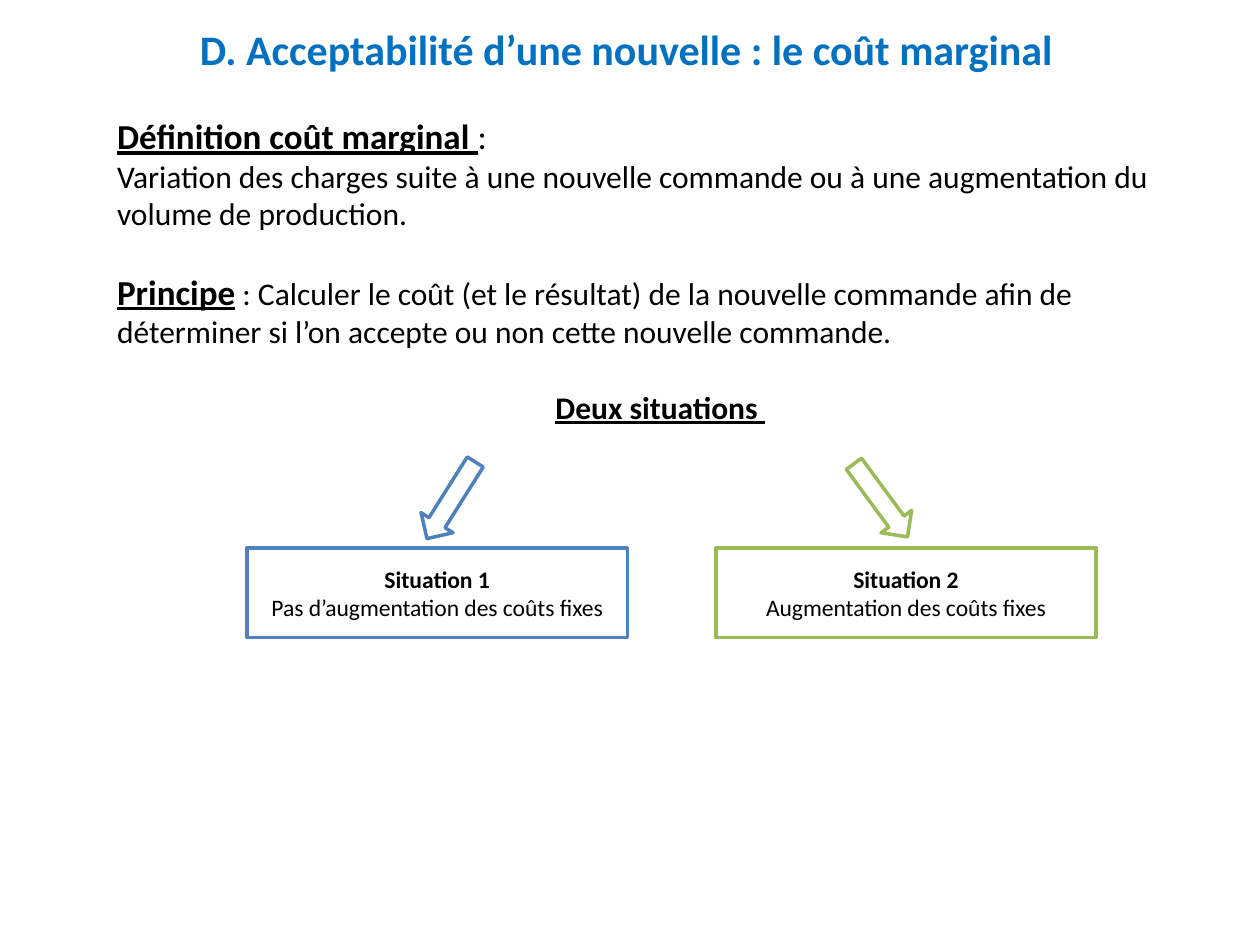
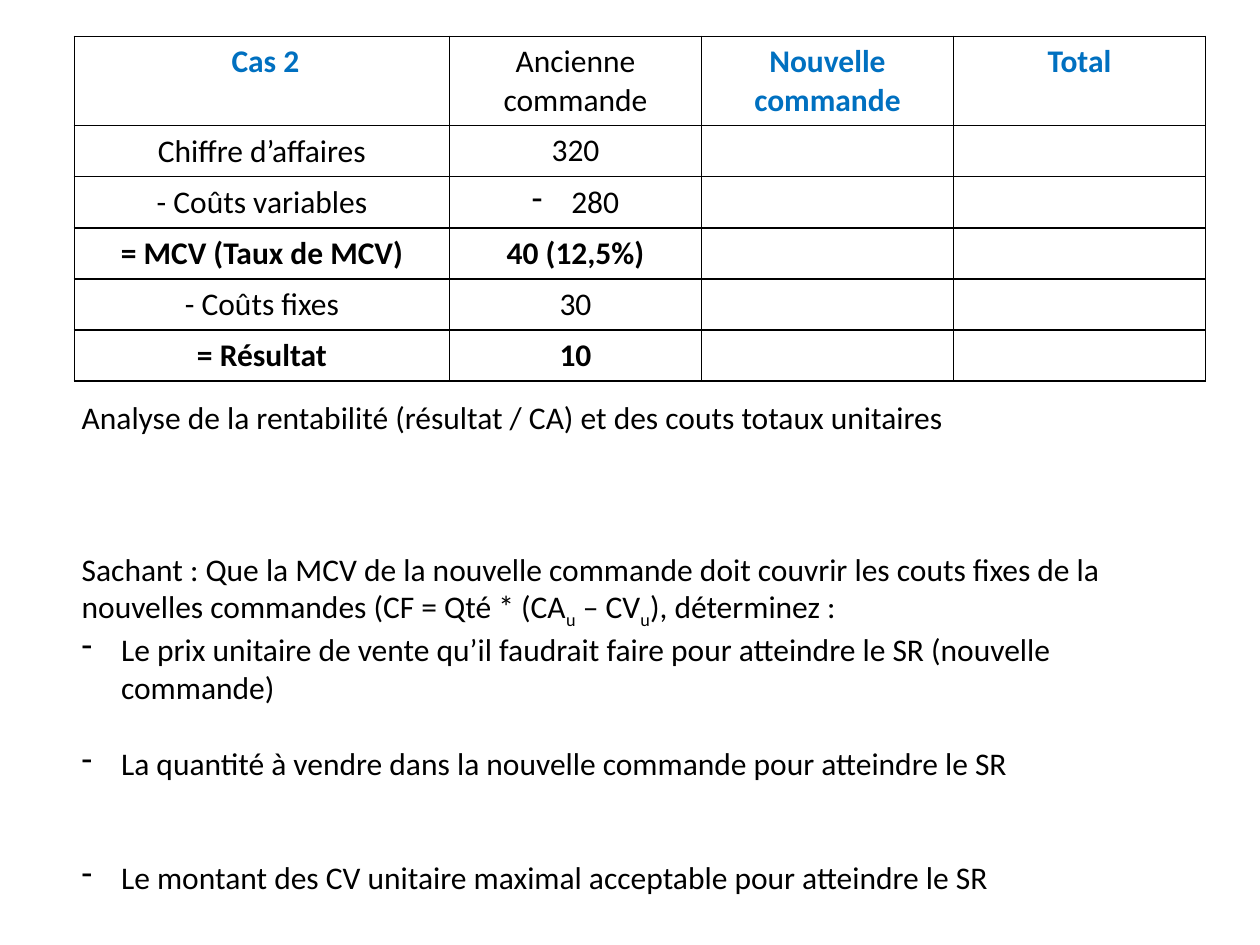
from dataclasses import dataclass

from lxml.etree import SubElement
from pptx import Presentation
from pptx.dml.color import RGBColor
from pptx.enum.shapes import MSO_SHAPE
from pptx.enum.text import MSO_ANCHOR, MSO_AUTO_SIZE, PP_ALIGN
from pptx.oxml.ns import qn
from pptx.shapes.autoshape import Shape
from pptx.slide import Slide
from pptx.table import _Cell
from pptx.text.text import TextFrame
from pptx.util import Pt

FONT = "Calibri"
BLACK = "000000"
WHITE = "FFFFFF"
TITLE_BLUE = "0070C0"
BLUE = "4F81BD"
GREEN = "9BBB59"
BODY_SIZE = 18
HEADING_SIZE = 20
BLANK_LINE = 21.7
BULLET_INDENT = 22.5
TITLE_ONLY, BLANK = 5, 6


@dataclass(frozen=True)
class Run:
    text: str
    size: float | None = None
    bold: bool | None = None
    underline: bool | None = None
    subscript: bool = False


@dataclass(frozen=True)
class Paragraph:
    runs: tuple[Run, ...]
    size: float = BODY_SIZE
    color: str = BLACK
    bold: bool = False
    underline: bool = False
    align: PP_ALIGN = PP_ALIGN.LEFT
    blank_lines_before: int = 0
    indent: float = 0
    bullet: str = ""


@dataclass(frozen=True)
class Situation:
    heading: str
    detail: str
    color: str
    box_left: float
    arrow_left: float
    arrow_rotation: float


@dataclass(frozen=True)
class Row:
    label: str
    old_order: str
    bold: bool = False
    bullet: str = ""


def rgb(color: str) -> RGBColor:
    return RGBColor.from_string(color)


def plain(text: str, **options) -> Paragraph:
    return Paragraph((Run(text),), **options)


def dashed(text: str, **options) -> Paragraph:
    return plain(text, indent=BULLET_INDENT, bullet="-", **options)


def write(frame: TextFrame, paragraphs: list[Paragraph]) -> None:
    for index, content in enumerate(paragraphs):
        paragraph = frame.add_paragraph() if index else frame.paragraphs[0]
        paragraph.alignment = content.align
        paragraph.space_before = Pt(content.blank_lines_before * BLANK_LINE)
        font = paragraph.font
        font.name, font.size = FONT, Pt(content.size)
        font.bold, font.underline = content.bold, content.underline
        font.color.rgb = rgb(content.color)
        properties = paragraph._p.get_or_add_pPr()
        if content.indent:
            properties.set("marL", str(Pt(content.indent)))
            properties.set("indent", str(-Pt(content.indent)))
        if content.bullet:
            bullet = properties.makeelement(qn("a:buChar"), {"char": content.bullet})
            properties.find(qn("a:defRPr")).addprevious(bullet)
        for part in content.runs:
            run = paragraph.add_run()
            run.text = part.text
            if part.size:
                run.font.size = Pt(part.size)
            run.font.bold = part.bold
            run.font.underline = part.underline
            if part.subscript:
                run._r.get_or_add_rPr().set("baseline", "-25000")


def add_text(slide: Slide, left: float, top: float, width: float, height: float,
             paragraphs: list[Paragraph]) -> None:
    frame = slide.shapes.add_textbox(Pt(left), Pt(top), Pt(width), Pt(height)).text_frame
    frame.word_wrap = True
    write(frame, paragraphs)


def add_outlined(slide: Slide, kind: MSO_SHAPE, left: float, top: float,
                 width: float, height: float, color: str) -> Shape:
    shape = slide.shapes.add_shape(kind, Pt(left), Pt(top), Pt(width), Pt(height))
    shape.shadow.inherit = False
    shape.fill.solid()
    shape.fill.fore_color.rgb = rgb(WHITE)
    shape.line.color.rgb = rgb(color)
    shape.line.width = Pt(2)
    return shape


def add_title(slide: Slide, text: str) -> None:
    title = slide.shapes.title
    title.left, title.top, title.width, title.height = Pt(32.4), Pt(10), Pt(656.6), Pt(67.7)
    title.text_frame.auto_size = MSO_AUTO_SIZE.NONE
    title.text_frame.vertical_anchor = MSO_ANCHOR.TOP
    write(title.text_frame, [plain(text, size=24, color=TITLE_BLUE, bold=True,
                                   align=PP_ALIGN.CENTER, indent=27)])


def add_situation(slide: Slide, situation: Situation) -> None:
    arrow = add_outlined(slide, MSO_SHAPE.DOWN_ARROW, situation.arrow_left, 260,
                         21.6, 51.8, situation.color)
    arrow.rotation = situation.arrow_rotation
    box = add_outlined(slide, MSO_SHAPE.RECTANGLE, situation.box_left, 313.2,
                       217.4, 51.1, situation.color)
    box.text_frame.vertical_anchor = MSO_ANCHOR.MIDDLE
    write(box.text_frame, [
        plain(situation.heading, size=13.5, bold=True, align=PP_ALIGN.CENTER),
        plain(situation.detail, size=13.5, align=PP_ALIGN.CENTER),
    ])


def format_cell(cell: _Cell) -> None:
    cell.fill.background()
    properties = cell._tc.get_or_add_tcPr()
    for position, side in enumerate(("lnL", "lnR", "lnT", "lnB")):
        line = properties.makeelement(qn(f"a:{side}"), {"w": str(Pt(1))})
        fill = SubElement(line, qn("a:solidFill"))
        SubElement(fill, qn("a:srgbClr"), val=BLACK)
        properties.insert(position, line)


def add_cost_table(slide: Slide, headers: list[Paragraph], rows: list[Row]) -> None:
    widths = [214.4, 144, 144, 144]
    heights = [51] + [29.2] * len(rows)
    table = slide.shapes.add_table(len(heights), len(widths), Pt(42.5), Pt(20.8),
                                   Pt(sum(widths)), Pt(sum(heights))).table
    table.first_row = table.horz_banding = False
    for column, width in zip(table.columns, widths):
        column.width = Pt(width)
    for table_row, height in zip(table.rows, heights):
        table_row.height = Pt(height)
    for cell in table.iter_cells():
        format_cell(cell)
    for column, header in enumerate(headers):
        write(table.cell(0, column).text_frame, [header])
    for index, row in enumerate(rows, start=1):
        label, amount = table.cell(index, 0), table.cell(index, 1)
        label.vertical_anchor = MSO_ANCHOR.MIDDLE
        write(label.text_frame, [plain(row.label, bold=row.bold, align=PP_ALIGN.CENTER)])
        write(amount.text_frame, [plain(row.old_order, bold=row.bold, align=PP_ALIGN.CENTER,
                                        bullet=row.bullet,
                                        indent=BULLET_INDENT if row.bullet else 0)])


def build_definition_slide(presentation: Presentation) -> None:
    slide = presentation.slides.add_slide(presentation.slide_layouts[TITLE_ONLY])
    add_title(slide, "D. Acceptabilité d’une nouvelle : le coût marginal ")
    add_text(slide, 59.8, 61.9, 635, 186.5, [
        Paragraph((Run("Définition coût marginal ", bold=True, underline=True), Run(":")),
                  size=HEADING_SIZE),
        plain("Variation des charges suite à une nouvelle commande ou à une augmentation "
              "du volume de production."),
        Paragraph((Run("Principe", HEADING_SIZE, True, True),
                   Run(" : Calculer le coût (et le résultat) de la nouvelle commande afin de "
                       "déterminer si l’on accepte ou non cette nouvelle commande.")),
                  blank_lines_before=1),
        plain("Deux situations ", bold=True, underline=True, align=PP_ALIGN.CENTER,
              blank_lines_before=1),
    ])
    for situation in (
        Situation("Situation 1", "Pas d’augmentation des coûts fixes", BLUE, 141.1, 247, 32.2),
        Situation("Situation 2", "Augmentation des coûts fixes", GREEN, 409, 492.5, 323.7),
    ):
        add_situation(slide, situation)


def build_case_slide(presentation: Presentation) -> None:
    slide = presentation.slides.add_slide(presentation.slide_layouts[BLANK])
    highlight = {"color": TITLE_BLUE, "bold": True, "align": PP_ALIGN.CENTER}
    add_cost_table(slide, [
        plain(" Cas 2", **highlight),
        plain("Ancienne commande", align=PP_ALIGN.CENTER),
        plain("Nouvelle commande", **highlight),
        plain("Total", **highlight),
    ], [
        Row("Chiffre d’affaires", "320"),
        Row("- Coûts variables", "280", bullet="-"),
        Row("= MCV (Taux de MCV)", "40 (12,5%)", bold=True),
        Row("- Coûts fixes", "30"),
        Row("= Résultat", "10", bold=True),
    ])
    add_text(slide, 39.6, 223.9, 646.6, 312.5, [
        plain("Analyse de la rentabilité (résultat / CA) et des couts totaux unitaires"),
        Paragraph((Run("Sachant : Que la MCV de la nouvelle commande doit couvrir les couts "
                       "fixes de la nouvelles commandes (CF = Qté * (CA"),
                   Run("u", subscript=True), Run(" – CV"), Run("u", subscript=True),
                   Run("), déterminez :")), blank_lines_before=3),
        dashed("Le prix unitaire de vente qu’il faudrait faire pour atteindre le SR "
               "(nouvelle commande)"),
        dashed("La quantité à vendre dans la nouvelle commande pour atteindre le SR",
               blank_lines_before=1),
        dashed("Le montant des CV unitaire maximal acceptable pour atteindre le SR",
               blank_lines_before=2),
    ])


def main() -> None:
    presentation = Presentation()
    presentation.slide_width, presentation.slide_height = Pt(720), Pt(540)
    build_definition_slide(presentation)
    build_case_slide(presentation)
    presentation.save("out.pptx")


if __name__ == "__main__":
    main()
